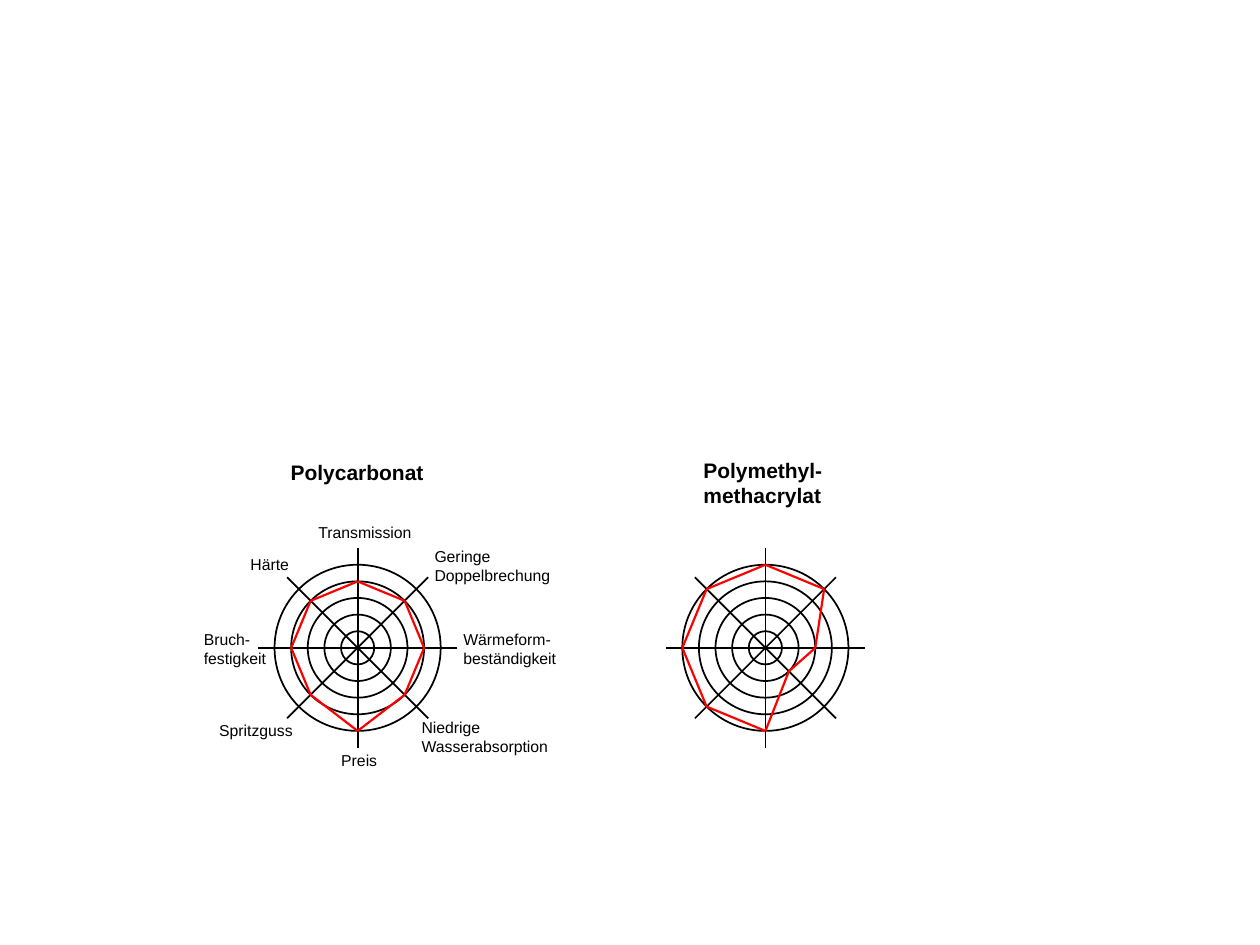
from math import cos, pi, sin

from lxml.etree import SubElement
from pptx import Presentation
from pptx.dml.color import RGBColor
from pptx.enum.shapes import MSO_CONNECTOR as Connector, MSO_SHAPE as Preset
from pptx.enum.text import MSO_AUTO_SIZE as AutoSize
from pptx.oxml.ns import qn
from pptx.util import Cm, Pt

RING_STEP = 0.335   # radius gained per rating point, cm
RINGS = 5
SPOKE = 2.01        # half length of an axis, cm
AXES = 8


def color(hex_code):
    return RGBColor.from_string(hex_code)


def on_axis(center, axis, radius):
    """Point on an axis; axis 0 points up, then clockwise."""
    angle = 2 * pi * axis / AXES
    return center[0] + radius * sin(angle), center[1] - radius * cos(angle)


class RadarSlide:
    font = "Arial"
    ink = "000000"
    accent = "FF0000"

    def __init__(self, prs):
        self.slide = prs.slides.add_slide(prs.slide_layouts[6])

    def text(self, wording, left, top, width, height, size=9, bold=False):
        box = self.slide.shapes.add_textbox(Cm(left), Cm(top), Cm(width), Cm(height))
        frame = box.text_frame
        frame.word_wrap = True
        frame.auto_size = AutoSize.SHAPE_TO_FIT_TEXT
        frame.text = wording
        font = frame.paragraphs[0].runs[0].font
        font.name, font.size, font.bold = self.font, Pt(size), bold
        font.color.rgb = color(self.ink)

    def line(self, parent, start, end, hex_code, width):
        link = parent.add_connector(Connector.STRAIGHT, *map(Cm, start + end))
        link.line.color.rgb = color(hex_code)
        link.line.width = Pt(width)
        SubElement(link._element.spPr, qn("a:effectLst"))

    def ring(self, parent, center, radius):
        circle = parent.add_shape(Preset.OVAL, Cm(center[0] - radius), Cm(center[1] - radius),
                                  Cm(2 * radius), Cm(2 * radius))
        circle.shadow.inherit = False
        circle.fill.background()
        circle.line.color.rgb = color(self.ink)
        circle.line.width = Pt(1)

    def grid(self, center):
        web = self.slide.shapes.add_group_shape().shapes
        for level in range(RINGS, 0, -1):
            self.ring(web, center, level * RING_STEP)
        for axis in range(AXES // 2):
            self.line(web, on_axis(center, axis, SPOKE),
                      on_axis(center, axis, -SPOKE), self.ink, 1)

    def profile(self, center, ratings):
        corners = [on_axis(center, axis, rating * RING_STEP)
                   for axis, rating in enumerate(ratings)]
        for start, end in zip(corners, corners[1:] + corners[:1]):
            self.line(self.slide.shapes, start, end, self.accent, 1.25)


def main():
    prs = Presentation()
    prs.slide_width, prs.slide_height = Cm(25.4), Cm(19.05)
    radar = RadarSlide(prs)

    # Ratings from the top axis clockwise
    materials = [
        ((7.21, 13.06), (4, 4, 4, 4, 5, 4, 4, 4)),
        ((15.43, 13.06), (5, 5, 3, 2, 5, 5, 5, 5)),
    ]
    for center, ratings in materials:
        radar.grid(center)
        radar.profile(center, ratings)

    # Axis names of the first radar: left, top, width, height
    axis_names = [
        ("Transmission", 6.17, 10.41, 2.5, 0.64),
        ("Geringe Doppelbrechung", 8.51, 10.9, 2.95, 1.02),
        ("Wärmeform-beständigkeit", 9.09, 12.57, 2.72, 1.02),
        ("Niedrige Wasserabsorption", 8.25, 14.35, 3.2, 1.02),
        ("Preis", 6.63, 15.01, 1.32, 0.64),
        ("Spritzguss", 4.17, 14.4, 2.13, 0.64),
        ("Bruch-festigkeit", 3.86, 12.57, 1.88, 1.02),
        ("Härte", 4.8, 11.05, 1.38, 0.64),
    ]
    for name in axis_names:
        radar.text(*name)

    # Material headings
    radar.text("Polycarbonat", 5.61, 9.14, 3.68, 0.76, size=12, bold=True)
    radar.text("Polymethyl-methacrylat", 13.93, 9.09, 2.95, 1.27, size=12, bold=True)

    prs.save("out.pptx")


if __name__ == "__main__":
    main()
